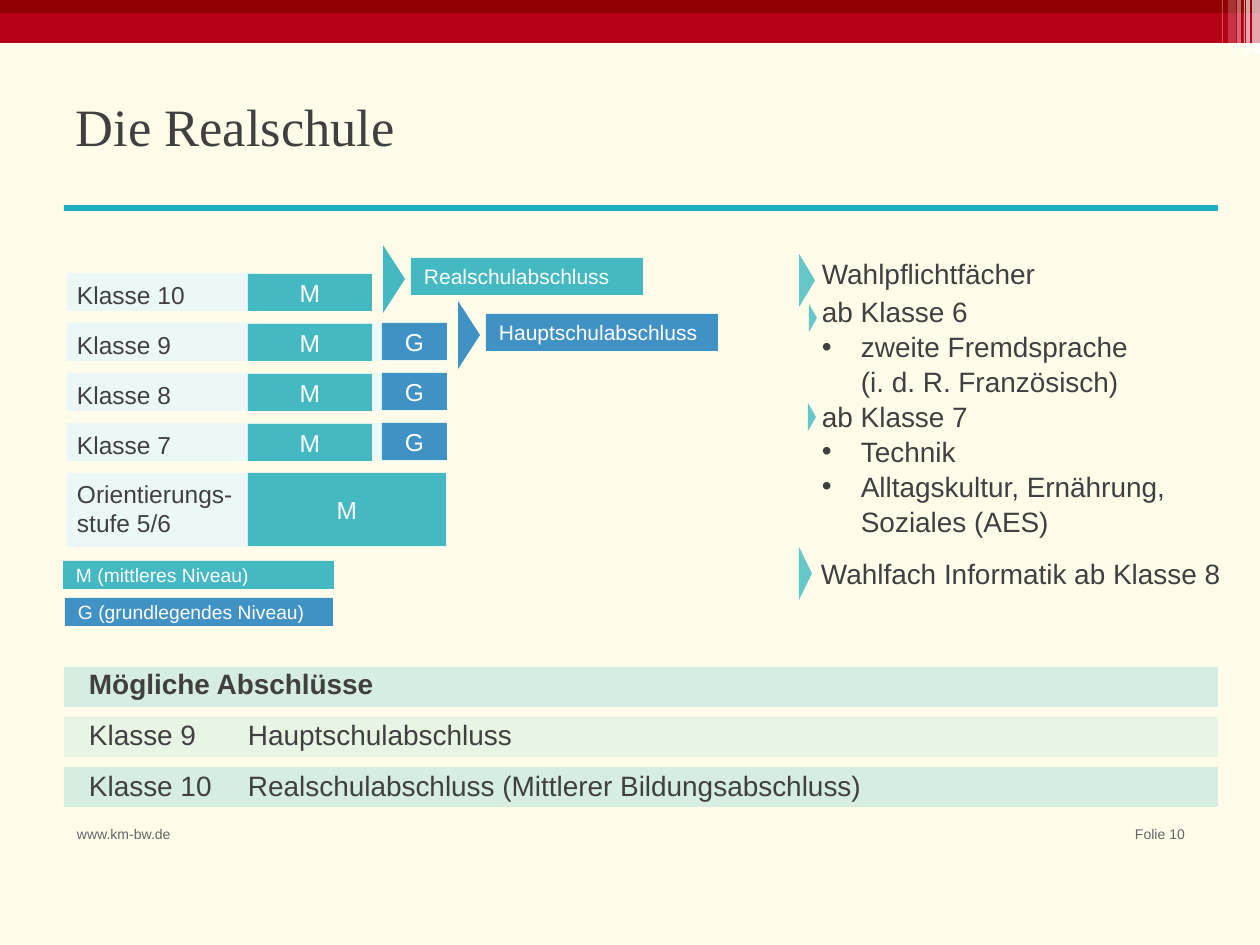
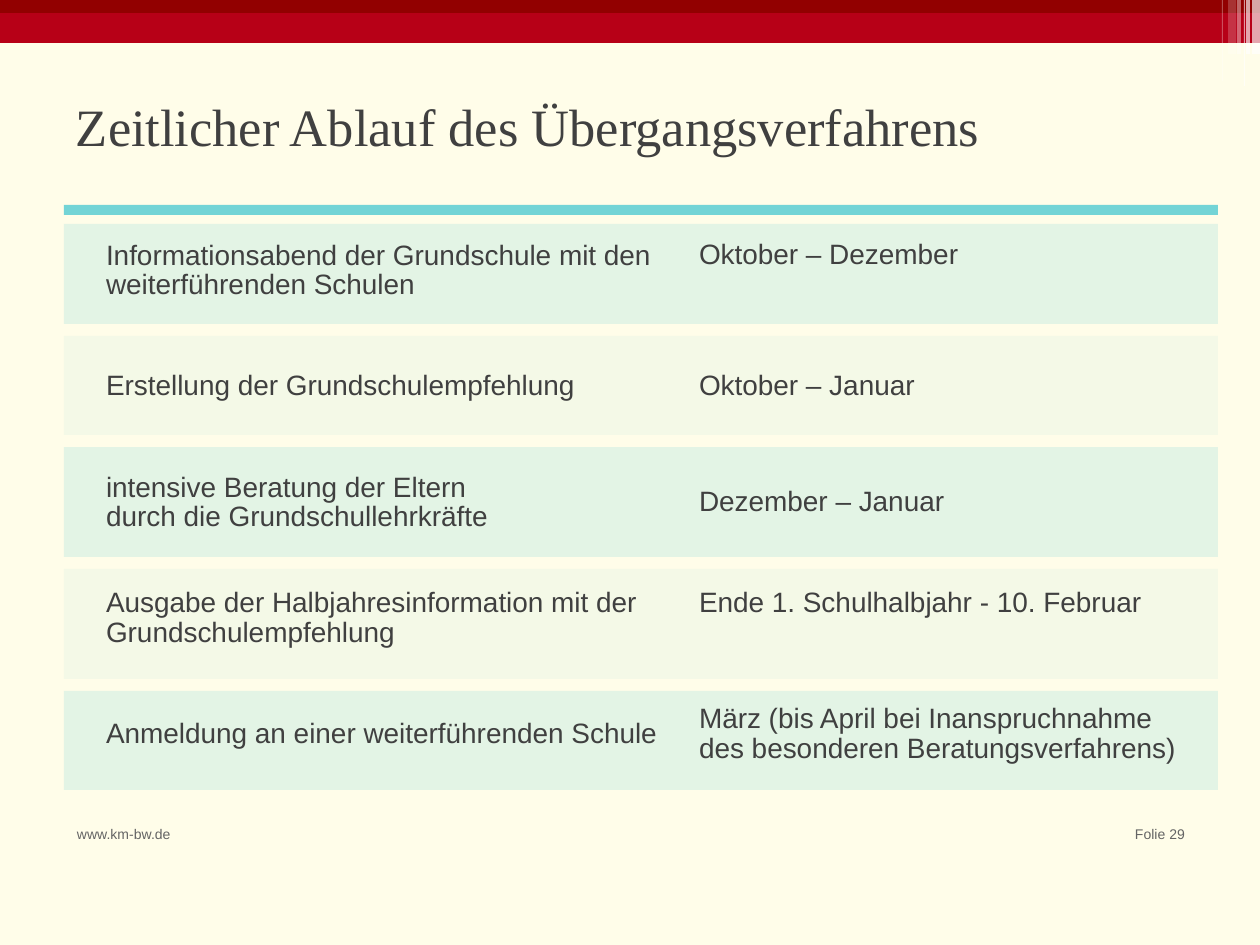
"""Build two school slides: the Realschule path and the transfer timeline."""
from lxml import etree
from pptx import Presentation
from pptx.dml.color import RGBColor
from pptx.enum.shapes import MSO_SHAPE
from pptx.enum.text import MSO_ANCHOR, PP_ALIGN
from pptx.oxml.ns import qn
from pptx.util import Emu, Pt

RECT, PLATE = MSO_SHAPE.RECTANGLE, MSO_SHAPE.PENTAGON
TOP, MIDDLE = MSO_ANCHOR.TOP, MSO_ANCHOR.MIDDLE
LEFT, CENTER, RIGHT = PP_ALIGN.LEFT, PP_ALIGN.CENTER, PP_ALIGN.RIGHT

CREAM = RGBColor(0xFF, 0xFD, 0xE9)
RED = RGBColor(0xB7, 0x00, 0x17)
DARK_RED = RGBColor(0x92, 0x00, 0x00)
WHITE = RGBColor(0xFF, 0xFF, 0xFF)
INK = RGBColor(0x40, 0x40, 0x40)
GREY = RGBColor(0x64, 0x64, 0x64)
TEAL = RGBColor(0x1E, 0xAE, 0xBD)
AQUA = RGBColor(0x73, 0xD4, 0xD6)
PALE = RGBColor(0xEC, 0xF7, 0xF7)
MID = RGBColor(0x44, 0xB9, 0xC2)
BLUE = RGBColor(0x41, 0x92, 0xC4)

SANS, SERIF = "Arial", "Times New Roman"
PX = 914400 / 126
PAD, INSET = 13, 6
EDGE, SPAN = 64, 1154
NO_GRID = "{2D5ABB26-0587-4C30-8999-92F81FD0307C}"
STRIPES = [(1246, 4, 54, 65), (1252, 8, 54, 65), (1222, 1, 81, 30),
           (1244, 1, 86, 60), (1228, 8, 54, 20), (1237, 4, 54, 40)]


def px(*sizes):
    return [Emu(round(size * PX)) for size in sizes]


class Deck:
    """Hold the shared style and the current slide."""

    def __init__(self):
        self.prs = Presentation()
        self.prs.slide_width, self.prs.slide_height = px(1260, 945)
        back = self.prs.slide_master.background.fill
        back.solid()
        back.fore_color.rgb = CREAM
        self.slide = None

    def page(self, title, number, rule, thick):
        self.slide = self.prs.slides.add_slide(self.prs.slide_layouts[5])
        self.box(0, 0, 1260, 43, RED)
        self.box(0, 0, 1260, 13, DARK_RED)
        for x, w, h, alpha in STRIPES:
            self.box(x, 0, w, h, WHITE, alpha)
        head = self.slide.shapes.title
        head.left, head.top, head.width, head.height = px(63, 77, 1134, 97)
        self.frame(head.text_frame, MIDDLE)
        self.fill(head.text_frame, [title], 30, font=SERIF)
        self.box(EDGE, 205, SPAN, thick, rule)
        self.note(EDGE, 820, 126, 49, ["www.km-bw.de"], 8, GREY)
        self.note(1076, 820, 122, 49, [f"Folie {number}"], 8, GREY, RIGHT)

    def frame(self, frame, anchor=TOP, side=PAD, edge=INSET, wrap=True):
        frame.word_wrap = wrap
        frame.vertical_anchor = anchor
        frame.margin_left, frame.margin_right = px(side, side)
        frame.margin_top, frame.margin_bottom = px(edge, edge)

    def fill(self, frame, lines, size, color=INK, align=LEFT, font=SANS,
             bold=False, space=1.0):
        for i, line in enumerate(lines):
            para = frame.paragraphs[0] if i == 0 else frame.add_paragraph()
            para.alignment = align
            para.line_spacing = space
            for j, part in enumerate(line.split("\n")):
                if j:
                    para.add_line_break()
                run = para.add_run()
                run.text = part
                run.font.name, run.font.size = font, Pt(size)
                run.font.bold = bold
                run.font.color.rgb = color

    def paint(self, shape, color, alpha=100):
        shape.shadow.inherit = False
        shape.fill.solid()
        shape.fill.fore_color.rgb = color
        shape.line.fill.background()
        if alpha < 100:
            tint = shape.fill._xPr.find(".//" + qn("a:srgbClr"))
            etree.SubElement(tint, qn("a:alpha")).set("val", str(alpha * 1000))

    def box(self, x, y, w, h, color, alpha=100, kind=RECT):
        shape = self.slide.shapes.add_shape(kind, *px(x, y, w, h))
        self.paint(shape, color, alpha)
        return shape

    def label(self, x, y, w, h, color, text, size=14, align=CENTER):
        frame = self.box(x, y, w, h, color).text_frame
        self.frame(frame, MIDDLE, edge=0)
        self.fill(frame, [text], size, WHITE, align)

    def plate(self, x, y, w, h):
        self.box(x, y, w, h, TEAL, 68, PLATE).adjustments[0] = 0.99

    def wedge(self, x, y, color):
        path = self.slide.shapes.build_freeform(x, y, scale=PX)
        path.add_line_segments([(x + 22, y + 34), (x, y + 68)])
        self.paint(path.convert_to_shape(), color)

    def note(self, x, y, w, h, lines, size, color=INK, align=LEFT,
             anchor=TOP, space=1.0, tight=False):
        frame = self.slide.shapes.add_textbox(*px(x, y, w, h)).text_frame
        if tight:
            self.frame(frame, anchor, 0, 0, False)
        else:
            self.frame(frame, anchor)
        self.fill(frame, lines, size, color, align, space=space)
        return frame

    def bullet(self, para):
        props = para._p.get_or_add_pPr()
        step = px(39)[0]
        props.set("marL", str(step))
        props.set("indent", str(-step))
        etree.SubElement(props, qn("a:buFont")).set("typeface", SANS)
        etree.SubElement(props, qn("a:buChar")).set("char", "•")

    def table(self, x, y, cols, row, cells, anchor, space=1.0):
        size = px(x, y, sum(cols), row * len(cells))
        grid = self.slide.shapes.add_table(len(cells), len(cols), *size).table
        grid.first_row = grid.horz_banding = False
        grid._tbl.tblPr.find(qn("a:tableStyleId")).text = NO_GRID
        for col, width in zip(grid.columns, px(*cols)):
            col.width = width
        for r, texts in enumerate(cells):
            grid.rows[r].height = px(row)[0]
            for c, text in enumerate(texts):
                cell = grid.cell(r, c)
                cell.fill.background()
                cell.vertical_anchor = anchor
                cell.margin_left, cell.margin_right = px(PAD, PAD)
                cell.margin_top, cell.margin_bottom = px(INSET, INSET)
                if text:
                    self.fill(cell.text_frame, text.split("|"), 16,
                              bold=len(cells) == 3 and r == 0, space=space)
        return grid


def path_page(deck):
    deck.page("Die Realschule", 10, TEAL, 6)
    for i, alpha in enumerate((18, 10, 18)):
        deck.box(EDGE, 667 + 50 * i, SPAN, 40, TEAL, alpha)
    grid = deck.table(76, 663, (159, 935), 51, [
        ("Mögliche Abschlüsse", ""),
        ("Klasse 9", "Hauptschulabschluss"),
        ("Klasse 10", "Realschulabschluss (Mittlerer Bildungsabschluss)"),
    ], TOP)
    grid.cell(0, 0).merge(grid.cell(0, 1))

    for i, grade in enumerate((10, 9, 8, 7)):
        y = 274 + 50 * i
        deck.box(67, y - 1, 380 if i else 194, 38, PALE)
        deck.note(77, y + 6, 108, 30, [f"Klasse {grade}"], 14, tight=True)
        deck.label(248, y, 124, 37, MID, "M")
        if i:
            deck.label(382, y - 1, 65, 37, BLUE, "G")
    deck.box(67, 473, 380, 74, PALE)
    deck.note(77, 479, 156, 60, ["Orientierungs-", "stufe 5/6"], 14, tight=True)
    deck.label(248, 473, 198, 73, MID, "M")

    for x, y, color, text in ((383, 245, MID, "Realschulabschluss"),
                              (458, 301, BLUE, "Hauptschulabschluss")):
        deck.wedge(x, y, color)
        deck.label(x + 28, y + 13, 232, 37, color, text, 12, LEFT)
    deck.label(63, 561, 271, 28, MID, "M (mittleres Niveau)", 11, LEFT)
    deck.label(65, 598, 268, 28, BLUE, "G (grundlegendes Niveau)", 11, LEFT)

    frame = deck.note(809, 254, 443, 285, [
        "Wahlpflichtfächer", "ab Klasse 6",
        "zweite Fremdsprache \n(i. d. R. Französisch)", "ab Klasse 7",
        "Technik", "Alltagskultur, Ernährung, \nSoziales (AES)",
    ], 16, anchor=MIDDLE, space=1.04)
    frame.paragraphs[1].space_before = Pt(2)
    for i in (2, 4, 5):
        deck.bullet(frame.paragraphs[i])
    deck.note(808, 549, 448, 208, ["Wahlfach Informatik ab Klasse 8"], 16,
              space=1.04)
    for spot in ((799, 254, 16, 53), (809, 304, 8, 28),
                 (808, 403, 8, 28), (799, 547, 13, 53)):
        deck.plate(*spot)


def time_page(deck):
    deck.page("Zeitlicher Ablauf des Übergangsverfahrens", 29, AQUA, 10)
    y = 224
    for i, h in enumerate((100, 99, 110, 110, 99)):
        deck.box(EDGE, y, SPAN, h, AQUA, 8 if i % 2 else 20)
        y += h + 12
    grid = deck.table(93, 213, (593, 508), 116, [
        ("Informationsabend der Grundschule mit den weiterführenden Schulen",
         "Oktober – Dezember"),
        ("Erstellung der Grundschulempfehlung", "Oktober – Januar"),
        ("intensive Beratung der Eltern|durch die Grundschullehrkräfte",
         "Dezember – Januar"),
        ("Ausgabe der Halbjahresinformation mit der Grundschulempfehlung",
         "Ende 1. Schulhalbjahr - 10. Februar"),
        ("Anmeldung an einer weiterführenden Schule",
         "März (bis April bei Inanspruchnahme des besonderen "
         "Beratungsverfahrens)"),
    ], MIDDLE, 0.96)
    for r in (0, 3):
        grid.cell(r, 1).margin_bottom = px(INSET + 31)[0]


def main():
    deck = Deck()
    path_page(deck)
    time_page(deck)
    deck.prs.save("out.pptx")


if __name__ == "__main__":
    main()
